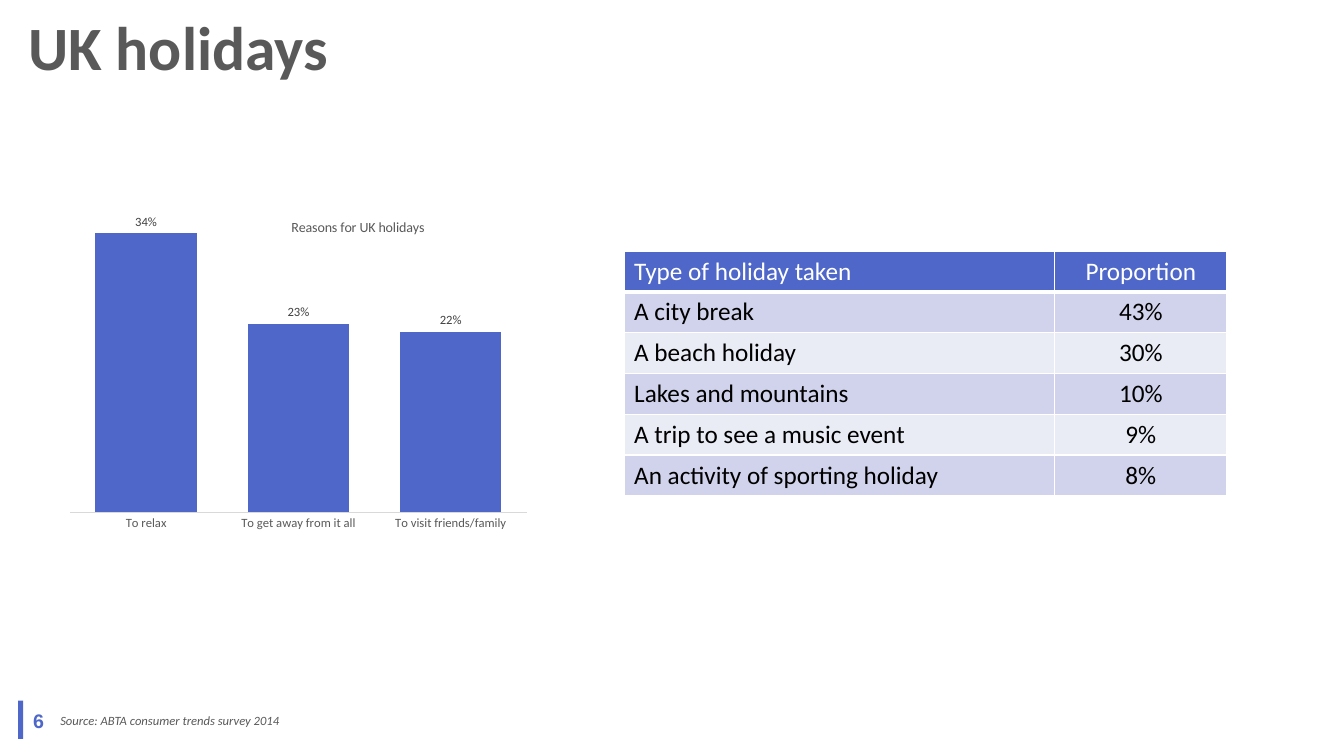
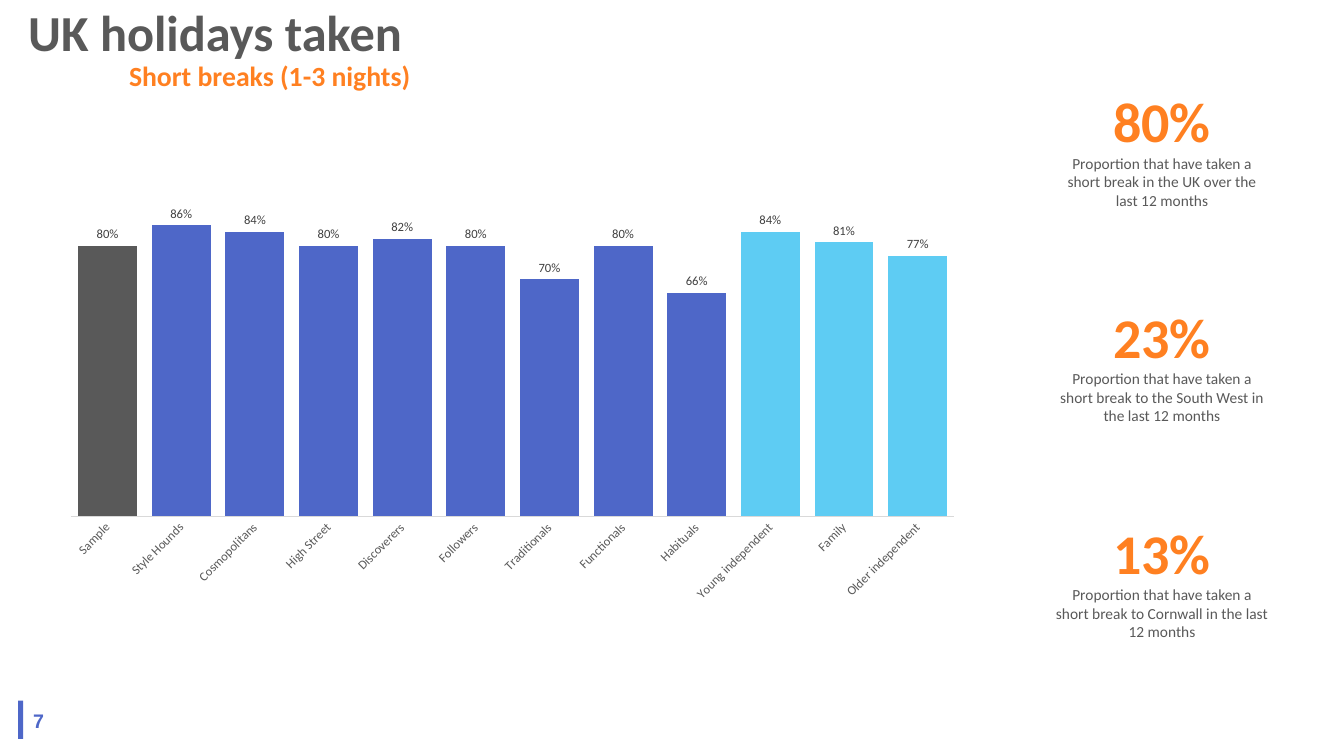
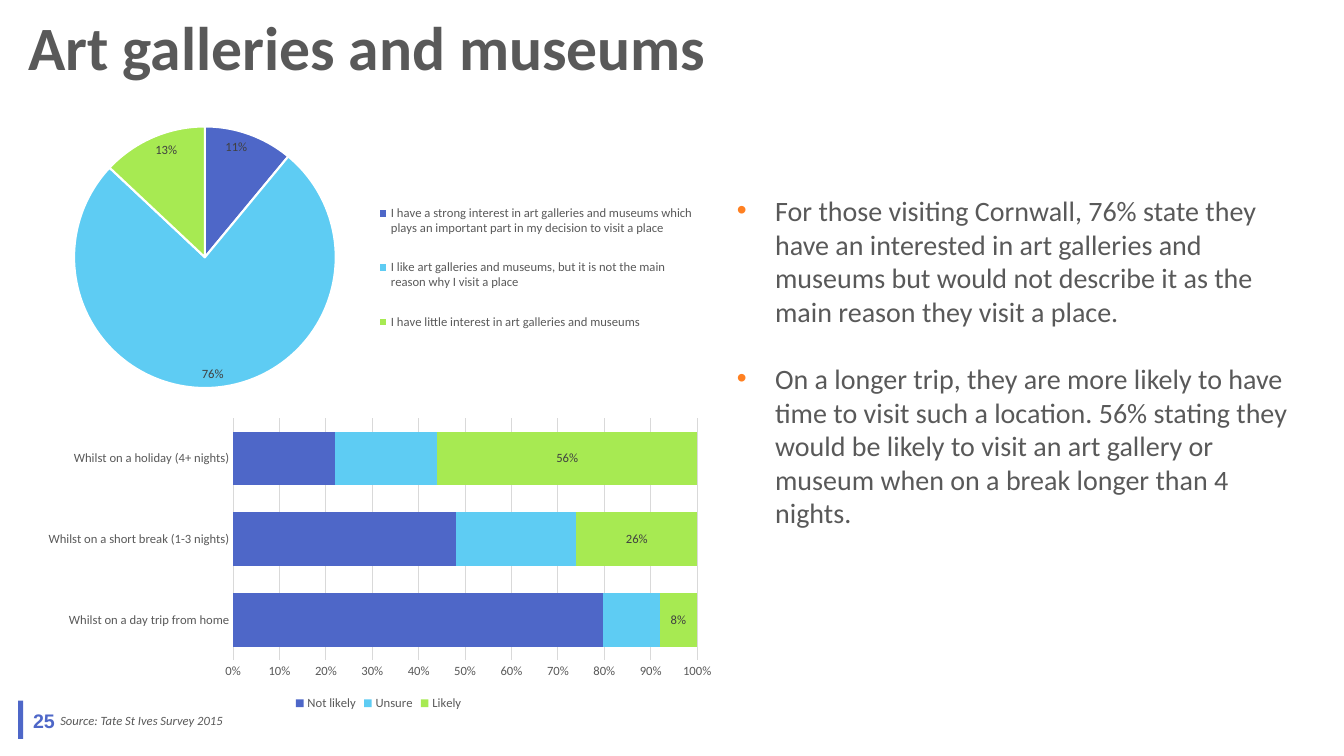
"""Build three slides on UK holidays, short breaks and gallery visits."""
from dataclasses import dataclass

from lxml import etree
from pptx import Presentation
from pptx import util as u
from pptx.chart.data import CategoryChartData
from pptx.dml.color import RGBColor
from pptx.enum import chart as charts, shapes, text
from pptx.oxml.ns import qn

EMU_PER_PX = 9144


@dataclass(frozen=True)
class Theme:
    """Colours, fonts and type sizes shared by the slides."""
    blue: str = "4E67C8"
    sky: str = "5ECCF3"
    green: str = "A7EA52"
    orange: str = "FF8021"
    grey: str = "595959"
    label: str = "404040"
    rule: str = "D9D9D9"
    white: str = "FFFFFF"
    black: str = "000000"
    band_dark: str = "D0D3EB"
    band_light: str = "E9EBF5"
    font: str = "Calibri"
    number_font: str = "Arial"
    title: float = 44
    title_small: float = 36
    subtitle: float = 19.8
    figure: float = 40
    body: float = 20
    table: float = 18
    number: float = 14
    caption: float = 11
    chart_title: float = 10
    small: float = 9


THEME = Theme()


@dataclass(frozen=True)
class Box:
    """A rectangle in px."""
    left: int
    top: int
    width: int
    height: int

    def emu(self):
        """Return the four lengths in EMU."""
        return [px(n) for n in (self.left, self.top, self.width, self.height)]

    def inset(self, left, top, width, height):
        """Return a box placed relative to this one."""
        return Box(self.left + left, self.top + top, width, height)


def px(length):
    """Turn px into EMU."""
    return u.Emu(length * EMU_PER_PX)


def rgb(colour):
    """Return a colour object for a hex string."""
    return RGBColor.from_string(colour)


def set_font(font, size=THEME.small, colour=THEME.grey, bold=False, italic=False, name=THEME.font):
    """Format a font."""
    font.size = u.Pt(size)
    font.color.rgb = rgb(colour)
    font.bold = bold
    font.italic = italic
    font.name = name


def add_text(para, wording, align=text.PP_ALIGN.LEFT, **style):
    """Add a formatted run to a paragraph."""
    para.alignment = align
    span = para.add_run()
    span.text = wording
    set_font(span.font, **style)


def add_text_box(page, box, anchor=text.MSO_ANCHOR.TOP):
    """Add a wrapping text box and return its frame."""
    frame = page.shapes.add_textbox(*box.emu()).text_frame
    frame.word_wrap = True
    frame.vertical_anchor = anchor
    return frame


def add_page(deck, wording, number, subtitle=None, source=None):
    """Add a slide with its title, page number and source."""
    page = deck.slides.add_slide(deck.slide_layouts[5])
    title = page.shapes.title
    title.left, title.top, title.width, title.height = Box(18, 7, 1298, 86).emu()
    frame = title.text_frame
    frame.auto_size = text.MSO_AUTO_SIZE.NONE
    frame.word_wrap = True
    frame.vertical_anchor = text.MSO_ANCHOR.MIDDLE
    para = frame.paragraphs[0]
    para.line_spacing = 0.9
    add_text(para, wording, size=THEME.title_small if subtitle else THEME.title, bold=True)
    if subtitle:
        tabs = etree.SubElement(para._p.get_or_add_pPr(), qn("a:tabLst"))
        etree.SubElement(tabs, qn("a:tab"), pos=str(px(100)), algn="l")
        para.add_line_break()
        add_text(para, "\t" + subtitle, size=THEME.subtitle, colour=THEME.orange, bold=True)
    add_footer(page, Box(18, 695, 485, 40), number, source)
    return page


def add_footer(page, box, number, source):
    """Draw the bar, the page number and the source line."""
    bar = page.shapes.add_shape(shapes.MSO_SHAPE.RECTANGLE, *box.inset(0, 0, 5, 38).emu())
    bar.shadow.inherit = False
    bar.fill.solid()
    bar.fill.fore_color.rgb = rgb(THEME.blue)
    bar.line.fill.background()
    frame = add_text_box(page, box.inset(5, 0, 54, 40), text.MSO_ANCHOR.MIDDLE)
    add_text(frame.paragraphs[0], number, size=THEME.number, colour=THEME.blue, bold=True,
             name=THEME.number_font)
    if source:
        frame = add_text_box(page, box.inset(32, 7, 453, 25))
        add_text(frame.paragraphs[0], source, italic=True)


def set_layout(parent, area, after=None, inner=False):
    """Place a chart element by fractions of the chart."""
    for old in parent.findall(qn("c:layout")):
        parent.remove(old)
    layout = etree.Element(qn("c:layout"))
    manual = etree.SubElement(layout, qn("c:manualLayout"))
    settings = [("layoutTarget", "inner")] if inner else []
    settings += [("xMode", "edge"), ("yMode", "edge"), *zip("xywh", area)]
    for tag, value in settings:
        etree.SubElement(manual, qn("c:" + tag), val=str(value))
    position = parent.index(parent.find(qn(after))) + 1 if after else 0
    parent.insert(position, layout)


def add_chart(page, box, kind, categories, series, plot_area):
    """Add a chart with its plot area placed."""
    data = CategoryChartData(number_format="0%")
    data.categories = categories
    for name, values in series:
        data.add_series(name, values)
    chart = page.shapes.add_chart(kind, *box.emu(), data).chart
    set_font(chart.font)
    chart.has_title = False
    chart.has_legend = False
    set_layout(chart._chartSpace.chart.plotArea, plot_area, inner=True)
    return chart


def label_values(series, position):
    """Show the values of a series as percentages."""
    labels = series.data_labels
    labels.show_value = True
    labels.number_format = "0%"
    labels.number_format_is_linked = False
    labels.position = position
    set_font(labels.font, colour=THEME.label)


def fill_solid(target, colour):
    """Fill a chart element with one colour."""
    target.format.fill.solid()
    target.format.fill.fore_color.rgb = rgb(colour)


def style_axes(chart, top):
    """Style the category axis and scale the value axis."""
    axis = chart.category_axis
    axis.major_tick_mark = charts.XL_TICK_MARK.NONE
    axis.format.line.color.rgb = rgb(THEME.rule)
    axis.format.line.width = u.Pt(0.75)
    set_font(axis.tick_labels.font)
    chart.value_axis.minimum_scale = 0
    chart.value_axis.maximum_scale = top
    chart.value_axis.has_major_gridlines = False


def add_legend(chart):
    """Show the legend below the plot."""
    chart.has_legend = True
    chart.legend.position = charts.XL_LEGEND_POSITION.BOTTOM
    chart.legend.include_in_layout = False
    set_font(chart.legend.font)


def add_columns(page, box, categories, values, plot_area, top, gap):
    """Add a column chart with labels and no value axis."""
    chart = add_chart(page, box, charts.XL_CHART_TYPE.COLUMN_CLUSTERED, categories,
                      [("Series 1", values)], plot_area)
    style_axes(chart, top)
    chart.value_axis.visible = False
    plot = chart.plots[0]
    plot.vary_by_categories = False
    plot.gap_width = gap
    plot.overlap = -27
    fill_solid(plot.series[0], THEME.blue)
    label_values(plot.series[0], charts.XL_LABEL_POSITION.OUTSIDE_END)
    return chart


def add_interest_pie(page, box):
    """Add the pie of interest in galleries."""
    categories = [
        "I have a strong interest in art galleries and museums which plays an important part "
        "in my decision to visit a place",
        "I like art galleries and museums, but it is not the main reason why I visit a place",
        "I have little interest in art galleries and museums",
    ]
    chart = add_chart(page, box, charts.XL_CHART_TYPE.PIE, categories,
                      [("Series 1", (0.11, 0.76, 0.13))], (0.07, 0.11, 0.36, 0.75))
    series = chart.plots[0].series[0]
    for index, colour in enumerate((THEME.blue, THEME.sky, THEME.green)):
        point = series.points[index]
        fill_solid(point, colour)
        point.format.line.color.rgb = rgb(THEME.white)
        point.format.line.width = u.Pt(1.5)
    label_values(series, charts.XL_LABEL_POSITION.INSIDE_END)
    add_legend(chart)
    set_layout(chart.legend._element, (0.49, 0.27, 0.43, 0.49), after="c:legendPos")


def add_likelihood_bars(page, box):
    """Add the stacked bars of likelihood to visit."""
    categories = ["Whilst on a day trip from home", "Whilst on a short break (1-3 nights)",
                  "Whilst on a holiday (4+ nights)"]
    answers = [("Not likely", (0.79, 0.48, 0.22)), ("Unsure", (0.12, 0.26, 0.22)),
               ("Likely", (0.08, 0.26, 0.56))]
    chart = add_chart(page, box, charts.XL_CHART_TYPE.BAR_STACKED_100, categories, answers,
                      (0.29, 0.02, 0.67, 0.8))
    style_axes(chart, 1)
    axis = chart.value_axis
    axis.major_unit = 0.1
    axis.major_tick_mark = charts.XL_TICK_MARK.NONE
    axis.format.line.fill.background()
    axis.has_major_gridlines = True
    axis.major_gridlines.format.line.color.rgb = rgb(THEME.rule)
    axis.major_gridlines.format.line.width = u.Pt(0.75)
    axis.tick_labels.number_format = "0%"
    axis.tick_labels.number_format_is_linked = False
    set_font(axis.tick_labels.font)
    plot = chart.plots[0]
    plot.gap_width = 50
    plot.overlap = 100
    for series, colour in zip(plot.series, (THEME.blue, THEME.sky, THEME.green)):
        fill_solid(series, colour)
    label_values(plot.series[2], charts.XL_LABEL_POSITION.CENTER)
    add_legend(chart)


def set_borders(cell, bottom):
    """Draw white cell borders with a given bottom width."""
    properties = cell._tc.get_or_add_tcPr()
    for index, (side, width) in enumerate((("L", 1), ("R", 1), ("T", 1), ("B", bottom))):
        line = etree.Element(qn("a:ln" + side), w=str(u.Pt(width)))
        fill = etree.SubElement(line, qn("a:solidFill"))
        etree.SubElement(fill, qn("a:srgbClr"), val=THEME.white)
        properties.insert(index, line)


def add_holiday_table(page, box, rows):
    """Add the table of holiday types."""
    table = page.shapes.add_table(len(rows), 2, *box.emu()).table
    table.columns[0].width = px(427)
    table.columns[1].width = px(box.width - 427)
    aligns = (text.PP_ALIGN.LEFT, text.PP_ALIGN.CENTER)
    for row, wordings in enumerate(rows):
        band = THEME.band_dark if row % 2 else THEME.band_light
        for column, wording in enumerate(wordings):
            cell = table.cell(row, column)
            cell.fill.solid()
            cell.fill.fore_color.rgb = rgb(band if row else THEME.blue)
            set_borders(cell, 1 if row else 3)
            add_text(cell.text_frame.paragraphs[0], wording, aligns[column], size=THEME.table,
                     colour=THEME.black if row else THEME.white)


def add_statistic(page, box, figure, caption):
    """Add a large figure above its caption."""
    frame = add_text_box(page, box)
    centre = text.PP_ALIGN.CENTER
    add_text(frame.paragraphs[0], figure, centre, size=THEME.figure, colour=THEME.orange, bold=True)
    add_text(frame.add_paragraph(), caption, centre, size=THEME.caption)


def add_bullets(page, box, wordings):
    """Add bulleted paragraphs."""
    frame = add_text_box(page, box)
    for index, wording in enumerate(wordings):
        para = frame.add_paragraph() if index else frame.paragraphs[0]
        if index:
            para.space_before = u.Pt(24)
        properties = para._p.get_or_add_pPr()
        properties.set("marL", str(px(38)))
        properties.set("indent", str(px(-38)))
        colour = etree.SubElement(properties, qn("a:buClr"))
        etree.SubElement(colour, qn("a:srgbClr"), val=THEME.orange)
        etree.SubElement(properties, qn("a:buFont"), typeface=THEME.number_font)
        etree.SubElement(properties, qn("a:buChar"), char="•")
        add_text(para, wording, size=THEME.body)


def build_holidays(deck):
    """Build the slide on reasons for and types of holiday."""
    page = add_page(deck, "UK holidays", "6", source="Source: ABTA consumer trends survey 2014")
    chart = add_columns(page, Box(60, 139, 472, 397),
                        ["To relax", "To get away from it all", "To visit friends/family"],
                        (0.34, 0.23, 0.22), (0.02, 0.11, 0.96, 0.82), 0.4, 50)
    chart.has_title = True
    add_text(chart.chart_title.text_frame.paragraphs[0], "Reasons for UK holidays",
             text.PP_ALIGN.CENTER, size=THEME.chart_title)
    set_layout(chart.chart_title._element, (0.48, 0.19), after="c:tx")
    add_holiday_table(page, Box(619, 249, 598, 243), [
        ("Type of holiday taken", "Proportion"),
        ("A city break", "43%"),
        ("A beach holiday", "30%"),
        ("Lakes and mountains", "10%"),
        ("A trip to see a music event", "9%"),
        ("An activity of sporting holiday", "8%"),
    ])


def build_short_breaks(deck):
    """Build the slide on short breaks by segment."""
    page = add_page(deck, "UK holidays taken", "7", subtitle="Short breaks (1-3 nights)")
    segments = ["Sample", "Style Hounds", "Cosmopolitans", "High Street", "Discoverers",
                "Followers", "Traditionals", "Functionals", "Habituals", "Young independent",
                "Family", "Older independent"]
    values = (0.8, 0.86, 0.84, 0.8, 0.82, 0.8, 0.7, 0.8, 0.66, 0.84, 0.81, 0.77)
    chart = add_columns(page, Box(52, 202, 913, 403), segments, values,
                        (0.02, 0.02, 0.96, 0.75), 0.9, 25)
    points = chart.plots[0].series[0].points
    for index, colour in ((0, THEME.grey), (9, THEME.sky), (10, THEME.sky), (11, THEME.sky)):
        fill_solid(points[index], colour)
    label_body = chart.category_axis._element.find(qn("c:txPr")).find(qn("a:bodyPr"))
    label_body.set("rot", "-2700000")
    label_body.set("vert", "horz")
    statistics = [("80%", "in the UK over the last 12 months"),
                  ("23%", "to the South West in the last 12 months"),
                  ("13%", "to Cornwall in the last 12 months")]
    column = Box(1037, 81, 231, 579)
    for index, (figure, scope) in enumerate(statistics):
        add_statistic(page, column.inset(0, 214 * index, column.width, 151), figure,
                      "Proportion that have taken a short break " + scope)


def build_galleries(deck):
    """Build the slide on galleries and museums."""
    page = add_page(deck, "Art galleries and museums", "25",
                    source="Source: Tate St Ives Survey 2015")
    add_interest_pie(page, Box(23, 86, 721, 349))
    add_likelihood_bars(page, Box(32, 409, 687, 300))
    add_bullets(page, Box(721, 187, 584, 347), [
        "For those visiting Cornwall, 76% state they have an interested in art galleries and "
        "museums but would not describe it as the main reason they visit a place.",
        "On a longer trip, they are more likely to have time to visit such a location. 56% "
        "stating they would be likely to visit an art gallery or museum when on a break longer "
        "than 4 nights.",
    ])


def main():
    """Build and save the deck."""
    deck = Presentation()
    deck.slide_width, deck.slide_height = px(1333), px(750)
    build_holidays(deck)
    build_short_breaks(deck)
    build_galleries(deck)
    deck.save("out.pptx")


if __name__ == "__main__":
    main()
